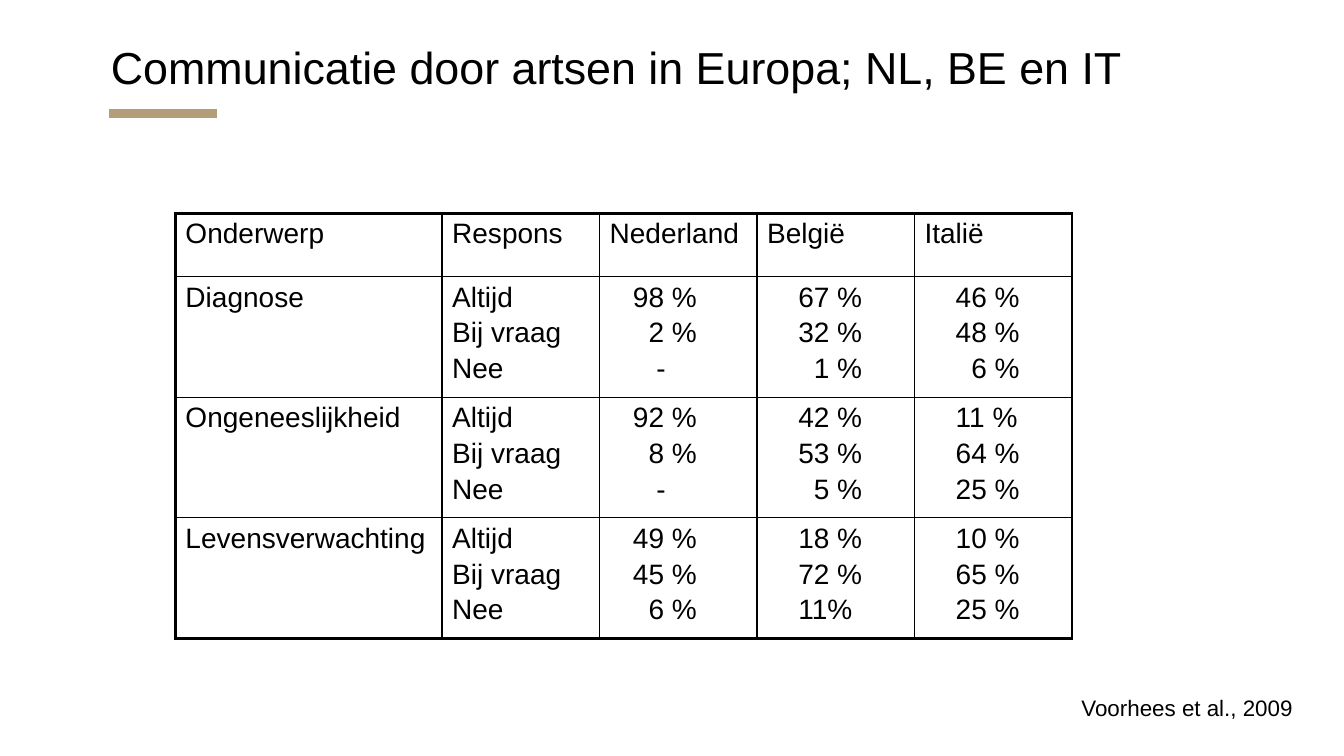
"""Build a slide with a table on how doctors in three countries inform patients."""
import pptx
import pptx.dml.color
import pptx.enum.shapes
import pptx.enum.text
import pptx.oxml
import pptx.oxml.ns
import pptx.util

Pt = pptx.util.Pt
BLACK = pptx.dml.color.RGBColor(0, 0, 0)
WHITE = pptx.dml.color.RGBColor(255, 255, 255)
SAND = pptx.dml.color.RGBColor(0xB4, 0x9E, 0x7A)
FACE = "Arial"
SPACE = 5.56
HEADS = ["Onderwerp", "Respons", "Nederland", "België", "Italië"]
REPLY = ["Altijd", "Bij vraag", "Nee"]
TOPICS = [
    ("Diagnose", ["98 %", "2 %", "-"], ["67 %", "32 %", "1 %"],
     ["46 %", "48 %", "6 %"]),
    ("Ongeneeslijkheid", ["92 %", "8 %", "-"], ["42 %", "53 %", "5 %"],
     ["11 %", "64 %", "25 %"]),
    ("Levensverwachting", ["49 %", "45 %", "6 %"], ["18 %", "72 %", "11%"],
     ["10 %", "65 %", "25 %"]),
]


def apply(obj, form):
    """Set each attribute named in a dict of format values."""
    for name, value in form.items():
        setattr(obj, name, value)


def style(para, size):
    """Give a paragraph its font."""
    apply(para.font, {"name": FACE, "size": Pt(size), "bold": False})
    para.font.color.rgb = BLACK


def place(shape, box):
    """Move a shape to a box in points."""
    apply(shape, dict(zip(("left", "top", "width", "height"), map(Pt, box))))


def title(slide, box, text):
    """Fill the title and draw the short bar beneath it."""
    head = slide.shapes.title
    place(head, box)
    frame = head.text_frame
    frame.text = text
    apply(frame, {
        "margin_left": Pt(7.2), "margin_right": Pt(7.2),
        "margin_top": Pt(6.6), "margin_bottom": Pt(3.6), "word_wrap": True,
        "vertical_anchor": pptx.enum.text.MSO_ANCHOR.TOP,
        "auto_size": pptx.enum.text.MSO_AUTO_SIZE.NONE})
    para = frame.paragraphs[0]
    apply(para, {"alignment": pptx.enum.text.PP_ALIGN.LEFT, "line_spacing": 1.0})
    style(para, 32)
    left, level = box[0] + 5.8, box[1] + 59.6
    bar = slide.shapes.add_connector(
        pptx.enum.shapes.MSO_CONNECTOR.STRAIGHT,
        Pt(left), Pt(level), Pt(left + 77), Pt(level))
    bar.line.color.rgb = SAND
    bar.line.width = Pt(6)
    bar._element.spPr.append(pptx.oxml.parse_xml(
        f"<a:effectLst {pptx.oxml.ns.nsdecls('a')}/>"))


def border(cell, widths):
    """Draw the left, right, top and bottom edges of a cell."""
    props = cell._tc.get_or_add_tcPr()
    for spot, (side, width) in enumerate(zip("LRTB", widths)):
        props.insert(spot, pptx.oxml.parse_xml(
            f"<a:ln{side} {pptx.oxml.ns.nsdecls('a')} w='{Pt(width)}'>"
            f"<a:solidFill><a:srgbClr val='{BLACK}'/></a:solidFill>"
            f"</a:ln{side}>"))


def indent(text, col):
    """Return the indent that lines up the digits of a share."""
    if col < 2:
        return 0
    base = 3 if col == 2 else 4
    lead = 0 if text[:2].isdigit() else 2 if text[0].isdigit() else 3
    return (base + lead) * SPACE


def fill(cell, lines, col, head):
    """Write the lines of a cell."""
    cell.fill.solid()
    cell.fill.fore_color.rgb = WHITE
    apply(cell, {"margin_left": Pt(7.2), "margin_right": Pt(7.2),
                 "margin_top": Pt(3.6), "margin_bottom": Pt(3.6)})
    frame = cell.text_frame
    for spot, text in enumerate(lines):
        para = frame.add_paragraph() if spot else frame.paragraphs[0]
        para.text = text
        if spot:
            para.space_before = Pt(3.2)
        if not head:
            para._p.get_or_add_pPr().set("marL", str(Pt(indent(text, col))))
        style(para, 20)


def grid(slide, box):
    """Build the table of replies by topic and country."""
    rows = [[[name] for name in HEADS]]
    rows += [[[topic], REPLY, *shares] for topic, *shares in TOPICS]
    high, wide = len(rows), len(HEADS)
    table = slide.shapes.add_table(high, wide, *map(Pt, box)).table
    apply(table, {"first_row": False, "horz_banding": False})
    first, top = 190.5, 45.2
    for col, column in enumerate(table.columns):
        column.width = Pt((box[2] - first) / (wide - 1) if col else first)
    for row, line in enumerate(table.rows):
        line.height = Pt((box[3] - top) / (high - 1) if row else top)
    for row, cells in enumerate(rows):
        for col, lines in enumerate(cells):
            cell = table.cell(row, col)
            fill(cell, lines, col, row == 0)
            outer = (col == 0, col == wide - 1, row == 0, row == high - 1)
            border(cell, [2.25 if edge else 1 for edge in outer])


def source(slide, box, text):
    """Add the reference at the lower right."""
    frame = slide.shapes.add_textbox(*map(Pt, box)).text_frame
    frame.text = text
    apply(frame, {"word_wrap": False,
                  "auto_size": pptx.enum.text.MSO_AUTO_SIZE.SHAPE_TO_FIT_TEXT})
    style(frame.paragraphs[0], 16)


def main():
    """Make the deck and save it."""
    deck = pptx.Presentation()
    apply(deck, {"slide_width": Pt(960), "slide_height": Pt(540)})
    slide = deck.slides.add_slide(deck.slide_layouts[5])
    title(slide, (72, 21.6, 816, 93.6),
          "Communicatie door artsen in Europa; NL, BE en IT")
    grid(slide, (125.3, 152.4, 640.5, 303.8))
    source(slide, (765.4, 492, 168.5, 26.6), "Voorhees et al., 2009")
    deck.save("out.pptx")


if __name__ == "__main__":
    main()
